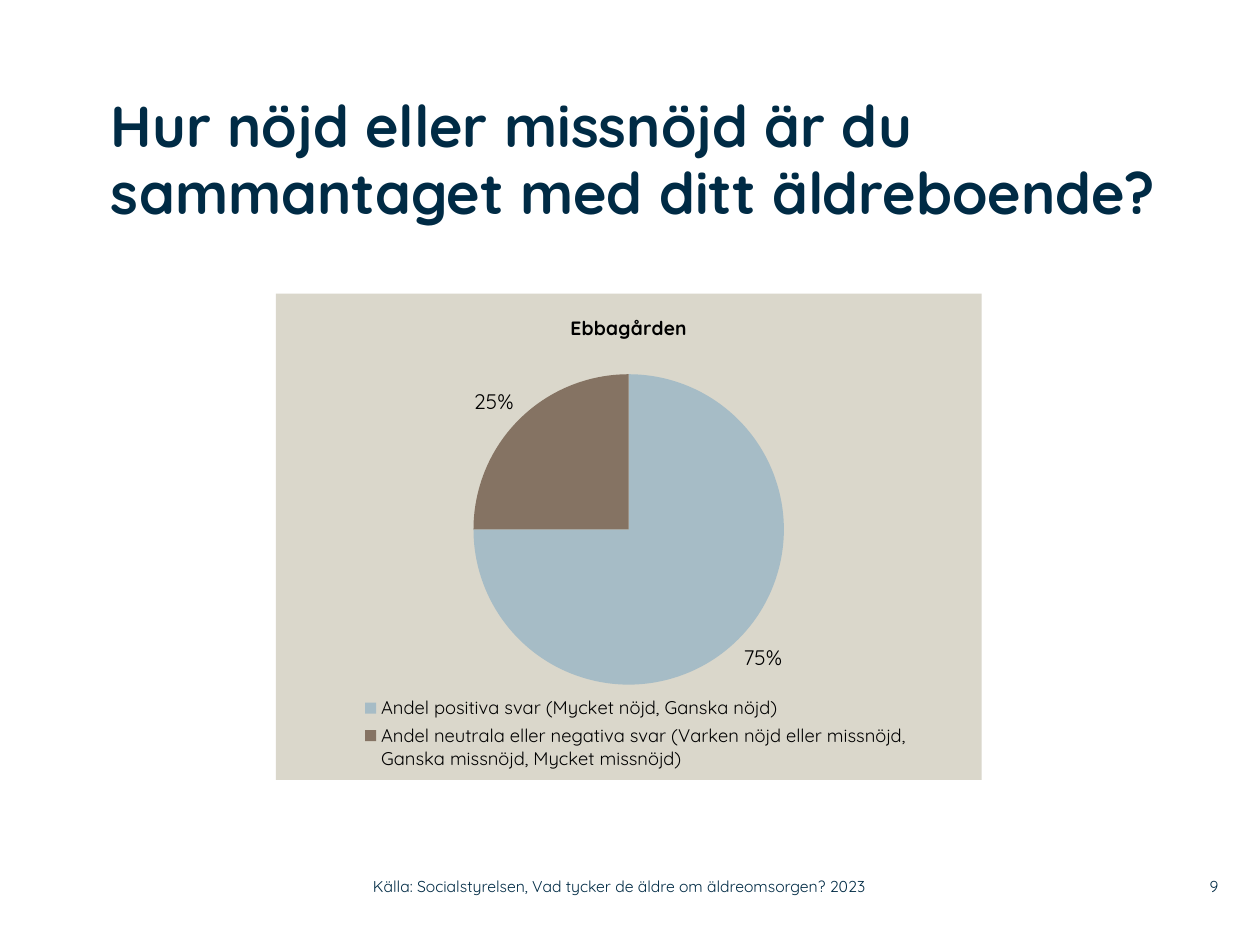
from dataclasses import dataclass

from lxml.etree import SubElement
from pptx import Presentation
from pptx.chart.data import CategoryChartData
from pptx.dml.color import RGBColor
from pptx.enum.chart import XL_CHART_TYPE as ChartType
from pptx.enum.chart import XL_LABEL_POSITION as LabelPosition
from pptx.enum.chart import XL_LEGEND_POSITION as LegendPosition
from pptx.enum.text import MSO_ANCHOR as Anchor
from pptx.enum.text import PP_ALIGN as Align
from pptx.oxml import parse_xml
from pptx.oxml.ns import nsdecls, qn
from pptx.util import Pt

FONT = "Quicksand"
NAVY = "002B45"
BLACK = "000000"
PANEL = "DAD7CB"
SLICES = {
    "Andel positiva svar (Mycket nöjd, Ganska nöjd)": (75, "A6BCC6"),
    "Andel neutrala eller negativa svar (Varken nöjd eller missnöjd, "
    "Ganska missnöjd, Mycket missnöjd)": (25, "857363"),
}


@dataclass
class Label:
    text: str
    left: float
    top: float
    width: float
    height: float
    size: float = 9
    bold: bool = False
    align: Align = Align.LEFT
    anchor: Anchor = Anchor.MIDDLE
    line_spacing: float = 1.0


LABELS = [
    Label("Hur nöjd eller missnöjd är du sammantaget med ditt äldreboende?",
          63.4, 54, 635.8, 102.2, size=33, bold=True, anchor=Anchor.TOP,
          line_spacing=0.96),
    Label("Källa: Socialstyrelsen, Vad tycker de äldre om äldreomsorgen? 2023",
          213.1, 496.1, 319, 20.9),
    Label("9", 662.4, 496.1, 33.8, 20.9, align=Align.RIGHT),
]


def color(value: str) -> RGBColor:
    return RGBColor.from_string(value)


def style_font(font, size: float, value: str, bold: bool = False) -> None:
    formats = {"name": FONT, "size": Pt(size), "bold": bold}
    for name, setting in formats.items():
        setattr(font, name, setting)
    font.color.rgb = color(value)


def add_label(slide, label: Label) -> None:
    box = slide.shapes.add_textbox(
        Pt(label.left), Pt(label.top), Pt(label.width), Pt(label.height))
    frame = box.text_frame
    formats = {"word_wrap": True, "vertical_anchor": label.anchor,
               "margin_left": 0, "margin_top": 0,
               "margin_right": 0, "margin_bottom": 0}
    for name, setting in formats.items():
        setattr(frame, name, setting)
    paragraph = frame.paragraphs[0]
    paragraph.alignment = label.align
    paragraph.line_spacing = label.line_spacing
    run = paragraph.add_run()
    run.text = label.text
    style_font(run.font, label.size, NAVY, label.bold)


def set_layout(element, x: float, y: float, w: float, h: float,
               inner: bool = False) -> None:
    layout = element.get_or_add_layout() if hasattr(
        element, "get_or_add_layout") else element.find(qn("c:layout"))
    if layout is None:
        layout = parse_xml(f"<c:layout {nsdecls('c')}/>")
        element.insert(0, layout)
    manual = SubElement(layout, qn("c:manualLayout"))
    settings = {"layoutTarget": "inner"} if inner else {}
    settings |= {"xMode": "edge", "yMode": "edge", "x": x, "y": y, "w": w, "h": h}
    for name, setting in settings.items():
        SubElement(manual, qn(f"c:{name}")).set("val", str(setting))


def fill_panel(chart_space, value: str) -> None:
    properties = parse_xml(
        f"<c:spPr {nsdecls('c', 'a')}><a:solidFill><a:srgbClr val='{value}'/>"
        "</a:solidFill><a:ln><a:noFill/></a:ln></c:spPr>")
    chart_space.find(qn("c:chart")).addnext(properties)


def add_pie(slide) -> None:
    data = CategoryChartData(number_format="0")
    data.categories = list(SLICES)
    data.add_series("Ebbagården", [share for share, _ in SLICES.values()])
    chart = slide.shapes.add_chart(
        ChartType.PIE, Pt(157.7), Pt(167.8), Pt(403.2), Pt(277.9), data).chart
    style_font(chart.font, 18, BLACK)

    chart.has_title = True
    title = chart.chart_title
    title.include_in_layout = False
    title.text_frame.text = "Ebbagården"
    style_font(title.text_frame.paragraphs[0].runs[0].font, 11, BLACK, True)

    chart.has_legend = True
    legend = chart.legend
    legend.position = LegendPosition.BOTTOM
    legend.include_in_layout = False
    style_font(legend.font, 10.5, BLACK)

    plot = chart.plots[0]
    plot.vary_by_categories = True
    series = plot.series[0]
    for index, (_, value) in enumerate(SLICES.values()):
        fill = series.points[index].format.fill
        fill.solid()
        fill.fore_color.rgb = color(value)
    labels = series.data_labels
    formats = {"show_percentage": True, "show_value": False,
               "number_format": "0%", "number_format_is_linked": False,
               "position": LabelPosition.OUTSIDE_END}
    for name, setting in formats.items():
        setattr(labels, name, setting)
    style_font(labels.font, 12, BLACK)

    chart_space = chart.element
    plot_area = chart_space.find(f".//{qn('c:plotArea')}")
    set_layout(plot_area, 0.28, 0.16, 0.44, 0.65, inner=True)
    legend_element = chart_space.find(f".//{qn('c:legend')}")
    legend_layout = legend_element.find(qn("c:layout"))
    if legend_layout is None:
        legend_layout = parse_xml(f"<c:layout {nsdecls('c')}/>")
        legend_element.find(qn("c:legendPos")).addnext(legend_layout)
    set_layout(legend_element, 0.11, 0.82, 0.8, 0.17)
    fill_panel(chart_space, PANEL)


def main() -> None:
    presentation = Presentation()
    presentation.slide_width = Pt(720)
    presentation.slide_height = Pt(540)
    slide = presentation.slides.add_slide(presentation.slide_layouts[6])
    for label in LABELS:
        add_label(slide, label)
    add_pie(slide)
    presentation.save("out.pptx")


if __name__ == "__main__":
    main()
